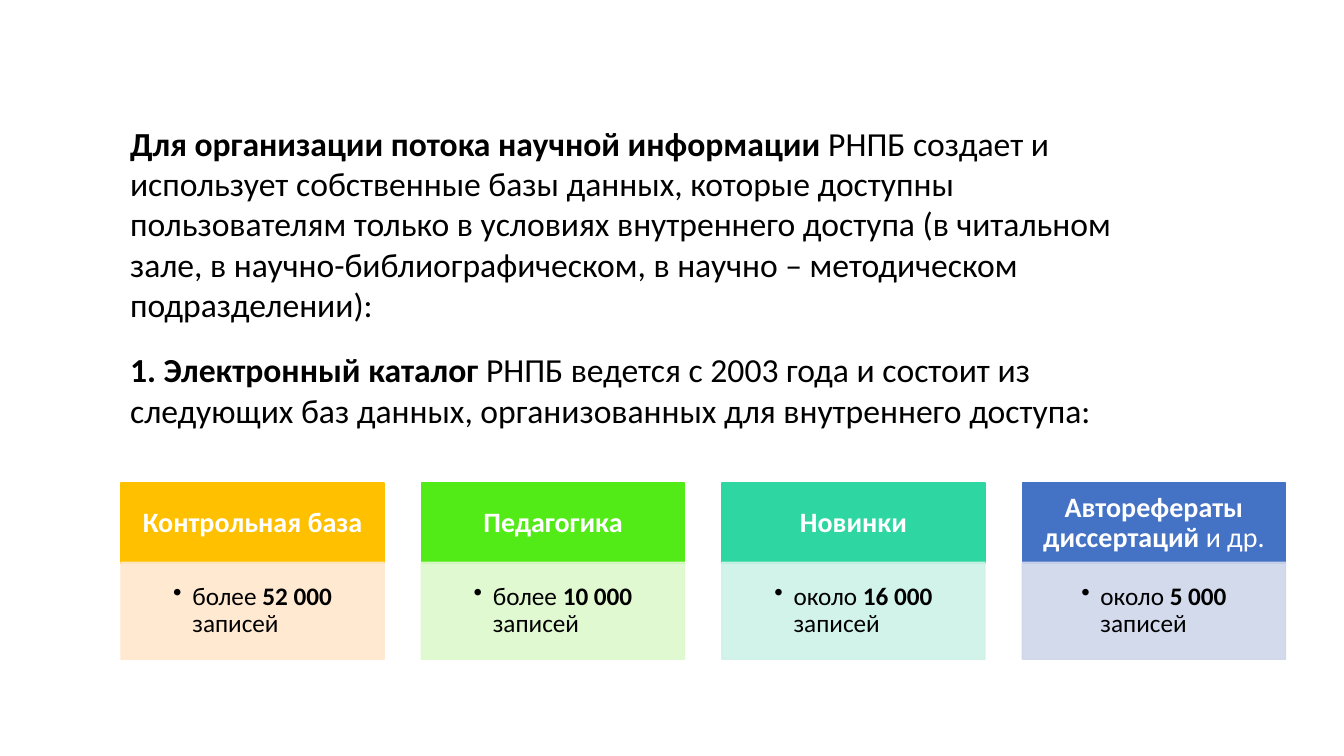
"""Build the slide on the library's internal databases."""
from dataclasses import dataclass
from typing import NamedTuple

from pptx import Presentation
from pptx.dml.color import RGBColor
from pptx.enum.shapes import MSO_SHAPE
from pptx.enum.text import MSO_ANCHOR, MSO_AUTO_SIZE, PP_ALIGN
from pptx.oxml.ns import qn
from pptx.oxml.xmlchemy import OxmlElement
from pptx.shapes.autoshape import Shape
from pptx.slide import Slide
from pptx.text.text import TextFrame
from pptx.util import Emu, Pt

EMU_PER_PX = 9144


@dataclass(frozen=True)
class Theme:
    font: str = "Calibri"
    ink: str = "000000"
    on_header: str = "FFFFFF"
    intro_size: int = 24
    header_size: int = 20
    count_size: int = 18
    border: int = 1
    tint_alpha: int = 90


class Words(NamedTuple):
    text: str
    bold: bool = False


class Box(NamedTuple):
    left: int
    top: int
    width: int
    height: int


@dataclass(frozen=True)
class Database:
    name: list[Words]
    count: list[Words]
    color: str
    tint: str


THEME = Theme()
INTRO_BOX = Box(119, 115, 1041, 318)
HEADER_BOX = Box(120, 479, 261, 80)
COUNT_BOX = Box(120, 558, 261, 96)
COLUMN_STEP = 298
BULLET_INDENT = 19

INTRO = [
    [
        Words("Для организации потока научной информации", True),
        Words(" РНПБ создает и использует собственные базы данных, которые доступны "
              "пользователям только в условиях внутреннего доступа (в читальном зале, "
              "в научно-библиографическом, в научно – методическом подразделении):"),
    ],
    [
        Words("1. Электронный каталог ", True),
        Words("РНПБ ведется с 2003 года и состоит из следующих баз данных, "
              "организованных для внутреннего доступа:"),
    ],
]

DATABASES = [
    Database([Words("Контрольная база", True)],
             [Words("более "), Words("52 000", True), Words(" записей")],
             "FFC000", "FFE8CC"),
    Database([Words("Педагогика", True)],
             [Words("более "), Words("10 000", True), Words(" записей")],
             "53EB17", "DDF9CC"),
    Database([Words("Новинки", True)],
             [Words("около "), Words("16 000", True), Words(" записей")],
             "2ED7A1", "CDF2E7"),
    Database([Words("Авторефераты диссертаций ", True), Words("и др.")],
             [Words("около "), Words("5 000", True), Words("\nзаписей")],
             "4472C4", "CFD6EA"),
]


def px(length: int) -> Emu:
    """Turn slide pixels into EMU."""
    return Emu(length * EMU_PER_PX)


def write(frame: TextFrame, paragraphs: list[list[Words]], *, size: int, color: str,
          align: PP_ALIGN = PP_ALIGN.LEFT, line_spacing: float = 1.0,
          space_after: float = 0, inset: tuple[int, int] = (10, 5),
          bullet: bool = False) -> None:
    """Fill a frame with formatted paragraphs."""
    frame.word_wrap = True
    frame.vertical_anchor = MSO_ANCHOR.MIDDLE
    frame.margin_left = frame.margin_right = px(inset[0])
    frame.margin_top = frame.margin_bottom = px(inset[1])
    for index, line in enumerate(paragraphs):
        paragraph = frame.paragraphs[0] if index == 0 else frame.add_paragraph()
        properties = paragraph._p.get_or_add_pPr()
        indent = px(BULLET_INDENT) if bullet else 0
        properties.set("marL", str(indent))
        properties.set("indent", str(-indent))
        mark = OxmlElement("a:buChar" if bullet else "a:buNone")
        if bullet:
            mark.set("char", "•")
        properties.append(mark)
        paragraph.alignment = align
        paragraph.line_spacing = line_spacing
        paragraph.space_before = Pt(0)
        paragraph.space_after = Pt(space_after)
        for words in line:
            for part_index, part in enumerate(words.text.split("\n")):
                if part_index:
                    paragraph.add_line_break()
                if part:
                    run = paragraph.add_run()
                    run.text = part
                    run.font.name = THEME.font
                    run.font.size = Pt(size)
                    run.font.bold = words.bold
                    run.font.color.rgb = RGBColor.from_string(color)


def add_panel(slide: Slide, box: Box, color: str, alpha: int = 100) -> Shape:
    """Draw a rectangle whose outline matches its fill."""
    panel = slide.shapes.add_shape(MSO_SHAPE.RECTANGLE, *map(px, box))
    panel.shadow.inherit = False
    panel.fill.solid()
    panel.fill.fore_color.rgb = RGBColor.from_string(color)
    panel.line.color.rgb = RGBColor.from_string(color)
    panel.line.width = Pt(THEME.border)
    if alpha < 100:
        for paint in list(panel.element.spPr.iter(qn("a:srgbClr"))):
            opacity = OxmlElement("a:alpha")
            opacity.set("val", str(alpha * 1000))
            paint.append(opacity)
    return panel


def add_database(slide: Slide, database: Database, column: int) -> None:
    """Draw one database column: its name above its record count."""
    shift = column * COLUMN_STEP
    header = add_panel(slide, HEADER_BOX._replace(left=HEADER_BOX.left + shift),
                       database.color)
    write(header.text_frame, [database.name], size=THEME.header_size,
          color=THEME.on_header, align=PP_ALIGN.CENTER, line_spacing=0.9,
          space_after=7, inset=(16, 9))
    count = add_panel(slide, COUNT_BOX._replace(left=COUNT_BOX.left + shift),
                      database.tint, THEME.tint_alpha)
    write(count.text_frame, [database.count], size=THEME.count_size,
          color=THEME.ink, line_spacing=0.9, space_after=2.7, inset=(8, 8),
          bullet=True)
    count.text_frame._txBody.bodyPr.set("anchorCtr", "1")


def add_intro(slide: Slide) -> None:
    """Place the introduction in the body placeholder."""
    intro = slide.placeholders[1]
    intro.left, intro.top, intro.width, intro.height = map(px, INTRO_BOX)
    write(intro.text_frame, INTRO, size=THEME.intro_size, color=THEME.ink,
          space_after=18)
    intro.text_frame.auto_size = MSO_AUTO_SIZE.SHAPE_TO_FIT_TEXT


def main() -> None:
    """Build and save the presentation."""
    presentation = Presentation()
    presentation.slide_width, presentation.slide_height = px(1333), px(750)
    slide = presentation.slides.add_slide(presentation.slide_layouts[1])
    title = slide.shapes.title.element
    title.getparent().remove(title)
    add_intro(slide)
    for column, database in enumerate(DATABASES):
        add_database(slide, database, column)
    presentation.save("out.pptx")


if __name__ == "__main__":
    main()
